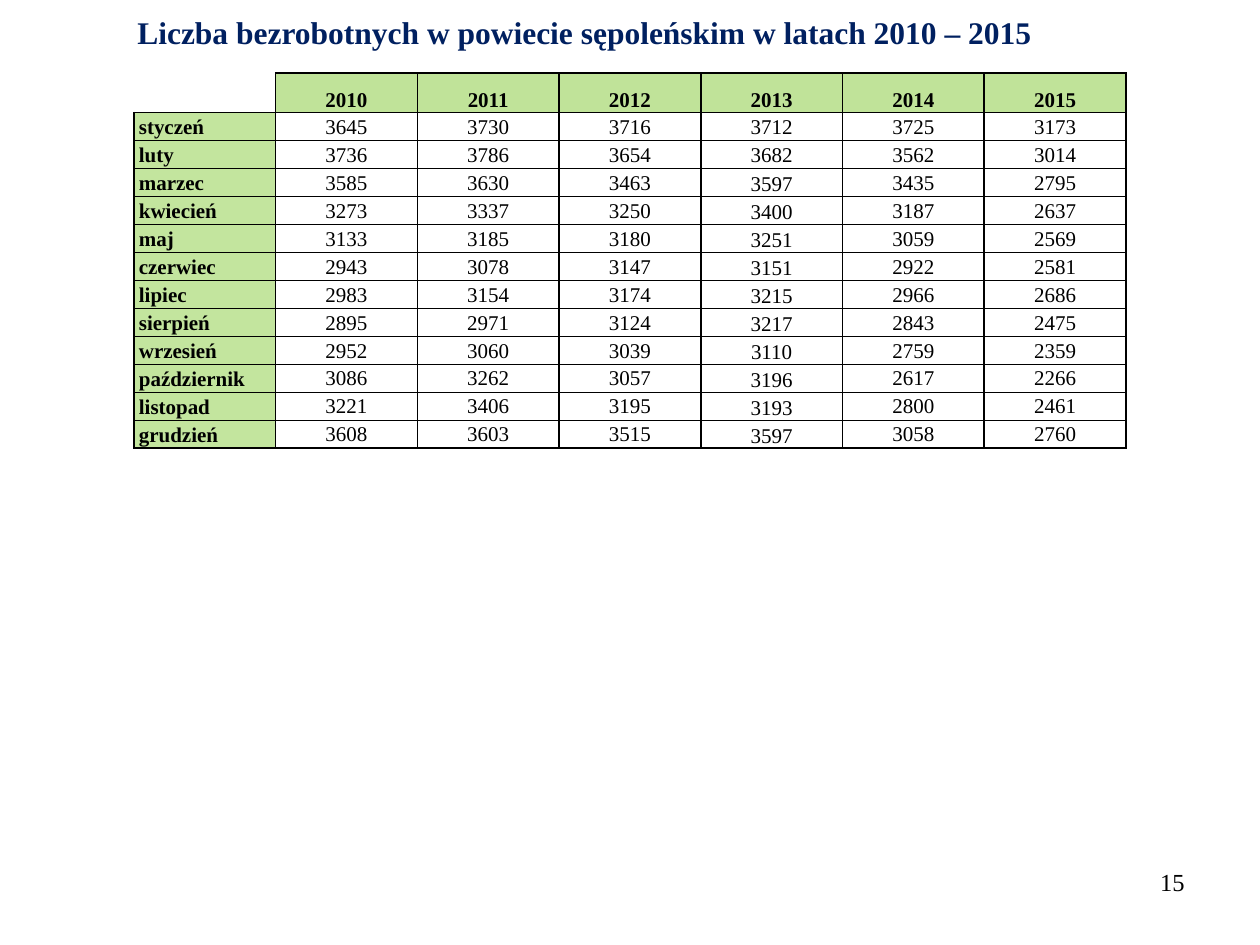
"""Build the slide with monthly unemployment figures for 2010–2015."""
from lxml import etree
from pptx import Presentation
from pptx.dml.color import RGBColor
from pptx.enum.text import MSO_ANCHOR, PP_ALIGN
from pptx.oxml.ns import qn
from pptx.util import Pt

LEFT, CENTER, RIGHT = PP_ALIGN.LEFT, PP_ALIGN.CENTER, PP_ALIGN.RIGHT
TOP, MIDDLE, BOTTOM = MSO_ANCHOR.TOP, MSO_ANCHOR.MIDDLE, MSO_ANCHOR.BOTTOM
FONT = "Times New Roman"
BLACK, NAVY = "000000", "002060"
HEADER_GREEN, MONTH_GREEN = "C0E399", "92D050"

YEARS = ["2010", "2011", "2012", "2013", "2014", "2015"]
UNEMPLOYED = {
    "styczeń": [3645, 3730, 3716, 3712, 3725, 3173],
    "luty": [3736, 3786, 3654, 3682, 3562, 3014],
    "marzec": [3585, 3630, 3463, 3597, 3435, 2795],
    "kwiecień": [3273, 3337, 3250, 3400, 3187, 2637],
    "maj": [3133, 3185, 3180, 3251, 3059, 2569],
    "czerwiec": [2943, 3078, 3147, 3151, 2922, 2581],
    "lipiec": [2983, 3154, 3174, 3215, 2966, 2686],
    "sierpień": [2895, 2971, 3124, 3217, 2843, 2475],
    "wrzesień": [2952, 3060, 3039, 3110, 2759, 2359],
    "październik": [3086, 3262, 3057, 3196, 2617, 2266],
    "listopad": [3221, 3406, 3195, 3193, 2800, 2461],
    "grudzień": [3608, 3603, 3515, 3597, 3058, 2760],
}
COLUMN_WIDTH, HEADER_HEIGHT, MONTH_HEIGHT = 81, 22.5, 16


def write(frame, text, size, color=BLACK, bold=False, align=LEFT):
    frame.text = text
    paragraph = frame.paragraphs[0]
    paragraph.alignment = align
    for run in paragraph.runs:
        run.font.name = FONT
        run.font.size = Pt(size)
        run.font.bold = bold
        run.font.color.rgb = RGBColor.from_string(color)


def add_borders(properties, visible_sides):
    for side in ("L", "R", "T", "B"):
        line = etree.SubElement(properties, qn(f"a:ln{side}"), w=str(Pt(1)))
        if side in visible_sides:
            fill = etree.SubElement(line, qn("a:solidFill"))
            etree.SubElement(fill, qn("a:srgbClr"), val=BLACK)
        else:
            etree.SubElement(line, qn("a:noFill"))


prs = Presentation()
prs.slide_width, prs.slide_height = Pt(720), Pt(540)
slide = prs.slides.add_slide(prs.slide_layouts[5])

title = slide.shapes.title
title.left, title.top, title.width, title.height = Pt(71.3), Pt(3.6), Pt(612.7), Pt(29)
title.text_frame.vertical_anchor = TOP
write(title.text_frame, "Liczba bezrobotnych w powiecie sępoleńskim w latach 2010 – 2015",
      18, NAVY, True)

rows = [["", *YEARS]] + [[month, *map(str, counts)] for month, counts in UNEMPLOYED.items()]
table_width = COLUMN_WIDTH * len(rows[0])
table_height = HEADER_HEIGHT + MONTH_HEIGHT * len(UNEMPLOYED)
table = slide.shapes.add_table(len(rows), len(rows[0]), Pt(76.5), Pt(41.8),
                               Pt(table_width), Pt(table_height)).table
table.first_row = table.horz_banding = False
for column in table.columns:
    column.width = Pt(COLUMN_WIDTH)

for r, values in enumerate(rows):
    table.rows[r].height = Pt(MONTH_HEIGHT if r else HEADER_HEIGHT)
    for c, value in enumerate(values):
        cell = table.cell(r, c)
        is_header, is_month = r == 0, c == 0
        is_corner = is_header and is_month
        write(cell.text_frame, value, 12, bold=is_header or is_month,
              align=LEFT if is_month else CENTER)
        low_2013 = c > 0 and YEARS[c - 1] == "2013" and r >= 3
        cell.vertical_anchor = BOTTOM if is_header or is_month or low_2013 else MIDDLE
        cell.margin_left = Pt(2.88 if is_month else 0.72)
        cell.margin_right = cell.margin_top = Pt(0.72)
        cell.margin_bottom = Pt(0.72 if is_month else 0)
        properties = cell._tc.get_or_add_tcPr()
        add_borders(properties, "RB" if is_corner else "LRTB")
        if is_corner:
            cell.fill.background()
            etree.SubElement(cell.text_frame.paragraphs[0]._p, qn("a:endParaRPr"), sz="1200")
        elif is_header:
            cell.fill.solid()
            cell.fill.fore_color.rgb = RGBColor.from_string(HEADER_GREEN)
        elif is_month:
            cell.fill.solid()
            cell.fill.fore_color.rgb = RGBColor.from_string(MONTH_GREEN)
            month_color = properties.find(qn("a:solidFill")).find(qn("a:srgbClr"))
            etree.SubElement(month_color, qn("a:alpha"), val="55000")
        else:
            cell.fill.background()

page_number = slide.shapes.add_textbox(Pt(516), Pt(492), Pt(168), Pt(37.5))
page_number.text_frame.word_wrap = True
write(page_number.text_frame, "15", 14, align=RIGHT)

prs.save("out.pptx")
